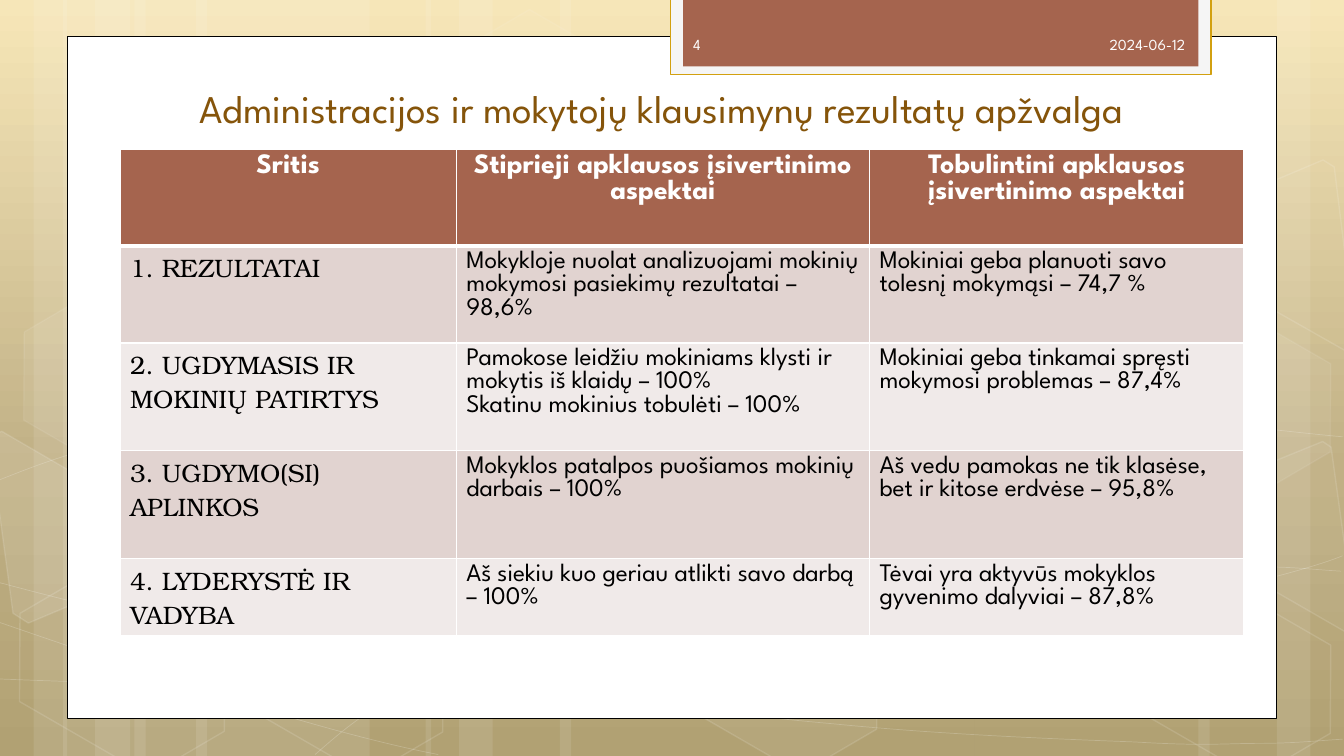
from copy import deepcopy
from dataclasses import dataclass
from math import cos, radians, sin

from lxml import etree
from pptx import Presentation
from pptx.dml.color import RGBColor
from pptx.enum.shapes import MSO_SHAPE
from pptx.enum.text import MSO_ANCHOR, PP_ALIGN
from pptx.oxml.ns import qn
from pptx.util import Pt

RECTANGLE, HEXAGON = MSO_SHAPE.RECTANGLE, MSO_SHAPE.HEXAGON
LEFT, CENTER, RIGHT = PP_ALIGN.LEFT, PP_ALIGN.CENTER, PP_ALIGN.RIGHT
MIDDLE, BOTTOM = MSO_ANCHOR.MIDDLE, MSO_ANCHOR.BOTTOM


@dataclass(frozen=True)
class Theme:
    """Colours, fonts and type sizes of the slide."""
    sky: tuple = ((0, "F6E4B0"), (0.62, "BAA878"), (1, "A99764"))
    white: str = "FFFFFF"
    black: str = "000000"
    tab_frame: str = "F5F5F5"
    gold: str = "D2A010"
    rust: str = "A5644E"
    bands: tuple = ("E1D3D0", "F0EAE9")
    title: str = "85540A"
    footer: str = "FEFEFE"
    sans: str = "League Spartan"
    serif: str = "TeX Gyre Bonum"
    title_size: int = 28
    header_size: int = 20
    body_size: int = 18
    footer_size: int = 11


THEME = Theme()
TILT = 30

BARS = [(96, 168), (0, 48), (24, 80), (140, 168), (45, 48), (68, 80),
        (696, 168), (912, 48), (856, 80), (400, 296), (304, 48), (328, 80)]
WAVES = [
    [(-1, 485), (51, 487), (103, 489), (175, 488), (247, 487), (336, 486), (431, 479),
     (528, 472), (664, 458), (752, 444), (840, 431), (930, 409), (959, 397)],
    [(-1, 343), (27, 332), (54, 321), (109, 310), (163, 300), (240, 284), (325, 279),
     (411, 274), (514, 273), (620, 279), (726, 284), (901, 307), (959, 312)],
    [(-2, 444), (114, 484), (230, 523), (313, 539)],
    [(-1, 416), (29, 424), (59, 432), (115, 444), (171, 454), (254, 472), (334, 485),
     (415, 497), (516, 510), (595, 517), (675, 525), (760, 528), (811, 530),
     (861, 533), (874, 531), (899, 531), (924, 531), (942, 529), (959, 528)],
    [(225, 539), (241, 525), (258, 510), (282, 498), (305, 485), (338, 470), (364, 460),
     (391, 450), (408, 446), (443, 438), (478, 431), (543, 421), (576, 416),
     (609, 411), (615, 411), (645, 410), (675, 408), (721, 405), (755, 405),
     (788, 404), (843, 405), (906, 405), (924, 405), (940, 407), (958, 408)],
]
HEXAGONS = [(312.5, 26, 4, 8), (469, 424, 6, 12), (3, 425.5, 0, 12), (6, 224.5, 7, 8),
            (159, 426, 0, 12), (793, 427, 0, 12), (793, 226, 7, 8)]
CUT_HEXAGONS = [
    ([(-8, 312), (1, 308), (75, 351), (84, 418), (20, 445), (9, 438)], (26.5, 385), 10),
    ([(881, 341), (945, 315), (951, 319), (969, 450), (963, 452), (890, 410)],
     (938, 374.5), 4),
    ([(881, 141), (945, 114), (953, 119), (969, 249), (964, 252), (890, 210)],
     (938, 173.5), 0),
]
COLUMN_WIDTHS = (240.3, 295.1, 267.5)
ROW_HEIGHTS = (69.25, 69.25, 77, 77, 50)
ROWS = [
    ("Sritis", "Stiprieji apklausos įsivertinimo aspektai",
     "Tobulintini apklausos įsivertinimo aspektai"),
    ("1. REZULTATAI",
     "Mokykloje nuolat analizuojami mokinių mokymosi pasiekimų rezultatai – 98,6%",
     "Mokiniai geba planuoti savo tolesnį mokymąsi – 74,7 %"),
    ("2. UGDYMASIS IR MOKINIŲ PATIRTYS",
     "Pamokose leidžiu mokiniams klysti ir mokytis iš klaidų – 100%\n"
     "Skatinu mokinius tobulėti – 100%",
     "Mokiniai geba tinkamai spręsti mokymosi problemas – 87,4%"),
    ("3. UGDYMO(SI) APLINKOS", "Mokyklos patalpos puošiamos mokinių darbais – 100%",
     "Aš vedu pamokas ne tik klasėse, bet ir kitose erdvėse – 95,8%"),
    ("4. LYDERYSTĖ IR VADYBA", "Aš siekiu kuo geriau atlikti savo darbą – 100%",
     "Tėvai yra aktyvūs mokyklos gyvenimo dalyviai – 87,8%"),
]


def rgb(color):
    """Turn a hex string into a colour."""
    return RGBColor.from_string(color)


def set_alpha(properties, route, percent):
    """Make the solid fill found along the route partly transparent."""
    if percent < 100:
        color = properties.find(route + "/" + qn("a:srgbClr"))
        etree.SubElement(color, qn("a:alpha"), val=str(percent * 1000))


def paint(shape, fill=None, line=None, width=1, fill_alpha=100, line_alpha=100):
    """Give a shape its fill and outline, without a shadow."""
    shape.shadow.inherit = False
    properties = shape.element.spPr
    if fill and fill_alpha:
        shape.fill.solid()
        shape.fill.fore_color.rgb = rgb(fill)
        set_alpha(properties, qn("a:solidFill"), fill_alpha)
    else:
        shape.fill.background()
    if line:
        shape.line.color.rgb = rgb(line)
        shape.line.width = Pt(width)
        set_alpha(properties, qn("a:ln") + "/" + qn("a:solidFill"), line_alpha)
    else:
        shape.line.fill.background()


def add_preset(slide, kind, box, **look):
    """Add a painted preset shape."""
    shape = slide.shapes.add_shape(kind, *map(Pt, box))
    paint(shape, **look)
    return shape


def add_outline(slide, points, close, **look):
    """Add a painted outline through the points."""
    corners = [(Pt(x), Pt(y)) for x, y in points]
    builder = slide.shapes.build_freeform(*corners[0])
    builder.add_line_segments(corners[1:], close=close)
    outline = builder.convert_to_shape()
    paint(outline, **look)
    return outline


def bend(outline):
    """Turn each three line segments of an outline into one cubic curve."""
    segments = list(outline.element.iter(qn("a:lnTo")))
    for start in range(0, len(segments), 3):
        curve = etree.Element(qn("a:cubicBezTo"))
        segments[start].addprevious(curve)
        for segment in segments[start:start + 3]:
            curve.append(segment[0])
            segment.getparent().remove(segment)


def turn_back(points, center):
    """Rotate points against the tilt around a center."""
    c, s = cos(radians(TILT)), sin(radians(TILT))
    x0, y0 = center
    return [(x0 + (x - x0) * c + (y - y0) * s, y0 - (x - x0) * s + (y - y0) * c)
            for x, y in points]


def write(frame, text, size, color, font, align=LEFT, bold=False):
    """Set the text of a frame and format its runs."""
    frame.text = text
    frame.word_wrap = True
    for paragraph in frame.paragraphs:
        paragraph.alignment = align
        for run in paragraph.runs:
            run.font.size, run.font.name, run.font.bold = Pt(size), font, bold
            run.font.color.rgb = rgb(color)


def add_sky(master):
    """Give the master its vertical gradient."""
    sky = master.background.fill
    sky.gradient()
    sky.gradient_angle = 270
    stops = master.element.find(".//" + qn("a:gsLst"))
    stops.append(deepcopy(stops[0]))
    for stop, (position, color) in zip(sky.gradient_stops, THEME.sky):
        stop.position = position
        stop.color.rgb = rgb(color)


def add_backdrop(slide):
    """Draw the light bars, waves, hexagons, panel and tab."""
    white = THEME.white
    for left, width in BARS:
        add_preset(slide, RECTANGLE, (left, 0, width, 540), fill=white, fill_alpha=10)
    for wave in WAVES:
        bend(add_outline(slide, wave, False, line=white, width=0.5, line_alpha=20))
    for left, top, fill_alpha, line_alpha in HEXAGONS:
        hexagon = add_preset(slide, HEXAGON, (left, top, 168.5, 109.5), fill=white,
                             line=white, fill_alpha=fill_alpha, line_alpha=line_alpha)
        hexagon.adjustments[0] = 0.285
        hexagon.rotation = TILT
    for corners, center, fill_alpha in CUT_HEXAGONS:
        cut = add_outline(slide, turn_back(corners, center), True, fill=white, line=white,
                          fill_alpha=fill_alpha, line_alpha=12)
        cut.rotation = TILT
    add_preset(slide, RECTANGLE, (48, 26, 864, 487), fill=white, line=THEME.black, width=0.5)
    add_preset(slide, RECTANGLE, (479, -1.5, 386, 54.8), fill=THEME.tab_frame, line=THEME.gold)
    add_preset(slide, RECTANGLE, (488, -1.5, 368, 49), fill=THEME.rust)


def move_to_master(slide, master):
    """Move the drawn backdrop from the slide to its master."""
    for shape in list(slide.shapes):
        if not shape.is_placeholder:
            shape.element.nvSpPr.cNvPr.set("id", str(shape.shape_id + 100))
            master.shapes.element.append(shape.element)


def set_borders(cell, top, bottom):
    """Draw white borders around a cell."""
    widths = {"a:lnL": 1, "a:lnR": 1, "a:lnT": top, "a:lnB": bottom}
    properties = cell._tc.get_or_add_tcPr()
    for index, (tag, width) in enumerate(widths.items()):
        border = etree.Element(qn(tag), w=str(Pt(width)))
        fill = etree.SubElement(border, qn("a:solidFill"))
        etree.SubElement(fill, qn("a:srgbClr"), val=THEME.white)
        properties.insert(index, border)


def add_results(slide):
    """Add the table of survey results."""
    table = slide.shapes.add_table(len(ROWS), len(COLUMN_WIDTHS), Pt(85.7), Pt(106.5),
                                   Pt(sum(COLUMN_WIDTHS)), Pt(sum(ROW_HEIGHTS))).table
    for column, width in zip(table.columns, COLUMN_WIDTHS):
        column.width = Pt(width)
    for r, (row, height) in enumerate(zip(table.rows, ROW_HEIGHTS)):
        row.height = Pt(height)
        for c, (cell, text) in enumerate(zip(row.cells, ROWS[r])):
            cell.fill.solid()
            cell.fill.fore_color.rgb = rgb(THEME.bands[(r - 1) % 2] if r else THEME.rust)
            set_borders(cell, 3 if r == 1 else 1, 1 if r else 3)
            if r:
                write(cell.text_frame, text, THEME.body_size, THEME.black,
                      THEME.sans if c else THEME.serif)
            else:
                write(cell.text_frame, text, THEME.header_size, THEME.white,
                      THEME.sans, CENTER, True)


def place_title(slide, text):
    """Place and format the title in front of the table."""
    title = slide.shapes.title
    title.left, title.top, title.width, title.height = map(Pt, (39.5, 7.5, 866, 90))
    title.text_frame.vertical_anchor = BOTTOM
    write(title.text_frame, text, THEME.title_size, THEME.title, THEME.sans, CENTER)
    slide.shapes.element.append(title.element)


def add_footer(slide, text, box, align):
    """Add a small text on the tab."""
    frame = slide.shapes.add_textbox(*map(Pt, box)).text_frame
    frame.vertical_anchor = MIDDLE
    write(frame, text, THEME.footer_size, THEME.footer, THEME.sans, align)


def main():
    """Build and save the slide."""
    deck = Presentation()
    deck.slide_width, deck.slide_height = Pt(960), Pt(540)
    slide = deck.slides.add_slide(deck.slide_layouts[5])
    add_sky(deck.slide_master)
    add_backdrop(slide)
    move_to_master(slide, deck.slide_master)
    add_results(slide)
    place_title(slide, "Administracijos ir mokytojų klausimynų rezultatų apžvalga")
    add_footer(slide, "2024-06-12", (630, 17.5, 223.7, 29), RIGHT)
    add_footer(slide, "4", (488, 17.5, 140, 29), LEFT)
    deck.save("out.pptx")


if __name__ == "__main__":
    main()
